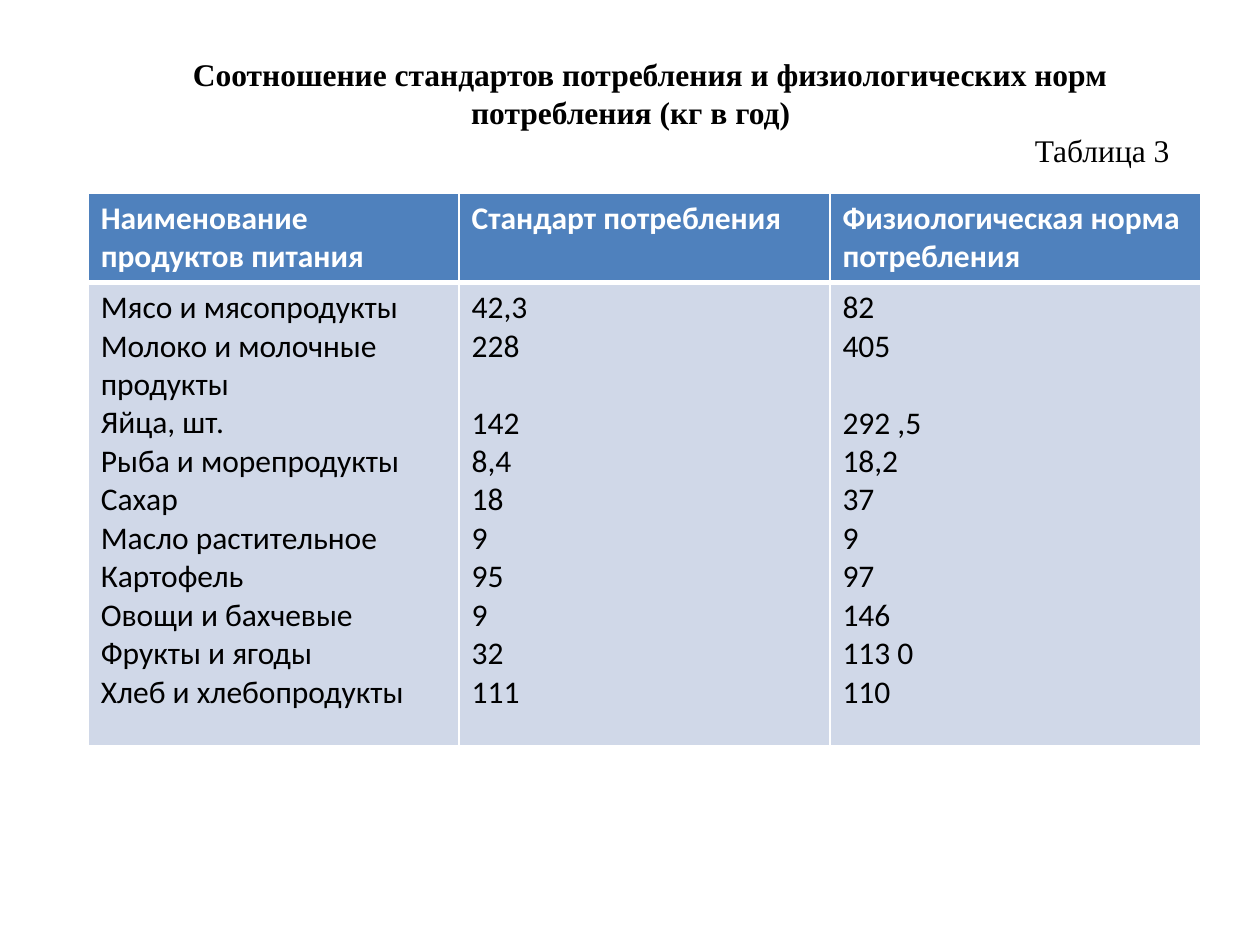
from lxml import etree
from pptx import Presentation
from pptx import util as u
from pptx.dml.color import RGBColor
from pptx.enum import text
from pptx.oxml.ns import qn

WIDTH, HEIGHT = 10, 7.5
LINE_HEIGHT = 22
TITLE = "Соотношение стандартов потребления и физиологических норм потребления (кг в год)"
HEADINGS = ["Наименование продуктов питания", "Стандарт потребления",
            "Физиологическая норма потребления"]
FOODS = [
    ("Мясо и мясопродукты", "42,3", "82"),
    ("Молоко и молочные продукты", "228", "405"),
    ("Яйца, шт.", "142", "292 ,5"),
    ("Рыба и морепродукты", "8,4", "18,2"),
    ("Сахар", "18", "37"),
    ("Масло растительное", "9", "9"),
    ("Картофель", "95", "97"),
    ("Овощи и бахчевые", "9", "146"),
    ("Фрукты и ягоды", "32", "113 0"),
    ("Хлеб и хлебопродукты", "111", "110"),
]
TWO_LINE_FOOD = 1
TITLE_FORMAT = {"name": "Times New Roman", "size": u.Pt(18), "bold": True}
LABEL_FORMAT = {**TITLE_FORMAT, "bold": False}
HEADING_FORMAT = {"name": "Calibri", "size": u.Pt(18), "bold": True}
FOOD_FORMAT = {**HEADING_FORMAT, "bold": False}


def paint(color_format, hex_color):
    color_format.rgb = RGBColor.from_string(hex_color)


def write(paragraph, wording, formats, hex_color):
    run = paragraph.add_run()
    run.text = wording
    for attribute, value in formats.items():
        setattr(run.font, attribute, value)
    paint(run.font.color, hex_color)


def add_paragraphs(frame, lines, formats, hex_color):
    paragraphs = []
    for index, line in enumerate(lines):
        paragraph = frame.add_paragraph() if index else frame.paragraphs[0]
        write(paragraph, line, formats, hex_color)
        paragraphs.append(paragraph)
    return paragraphs


def set_borders(cell, bottom, top):
    properties = cell._tc.get_or_add_tcPr()
    widths = {"lnL": 1, "lnR": 1, "lnT": top, "lnB": bottom}
    for position, (side, width) in enumerate(widths.items()):
        line = etree.Element(qn(f"a:{side}"), w=str(u.Pt(width)))
        fill = etree.SubElement(line, qn("a:solidFill"))
        etree.SubElement(fill, qn("a:srgbClr"), val="FFFFFF")
        properties.insert(position, line)


def fill_cell(cell, lines, formats, font_color, fill_color, bottom=1, top=1):
    cell.fill.solid()
    paint(cell.fill.fore_color, fill_color)
    set_borders(cell, bottom, top)
    return add_paragraphs(cell.text_frame, lines, formats, font_color)


def add_title(slide):
    box = slide.shapes.add_textbox(u.Inches(0.63), u.Inches(0.39),
                                   u.Inches(8.75), u.Inches(1.01))
    frame = box.text_frame
    frame.word_wrap = True
    title = frame.paragraphs[0]
    title.alignment = text.PP_ALIGN.CENTER
    title._p.get_or_add_pPr().set("indent", str(u.Inches(0.31)))
    write(title, TITLE, TITLE_FORMAT, "000000")
    label = frame.add_paragraph()
    label.alignment = text.PP_ALIGN.RIGHT
    write(label, "Таблица 3", LABEL_FORMAT, "000000")


def add_food_table(slide):
    row_heights = [0.71, 3.68]
    table = slide.shapes.add_table(
        len(row_heights), len(HEADINGS), u.Inches(0.7), u.Inches(1.53),
        u.Inches(8.83), u.Inches(sum(row_heights))).table
    for row, height in zip(table.rows, row_heights):
        row.height = u.Inches(height)
    for column, (heading, entries) in enumerate(zip(HEADINGS, zip(*FOODS))):
        fill_cell(table.cell(0, column), [heading], HEADING_FORMAT,
                  "FFFFFF", "4F81BD", bottom=3)
        paragraphs = fill_cell(table.cell(1, column), entries, FOOD_FORMAT,
                               "000000", "D0D8E8", top=3)
        if column:
            paragraphs[TWO_LINE_FOOD + 1].space_before = u.Pt(LINE_HEIGHT)


def main():
    deck = Presentation()
    deck.slide_width, deck.slide_height = u.Inches(WIDTH), u.Inches(HEIGHT)
    slide = deck.slides.add_slide(deck.slide_layouts[6])
    add_food_table(slide)
    add_title(slide)
    deck.save("out.pptx")


if __name__ == "__main__":
    main()
